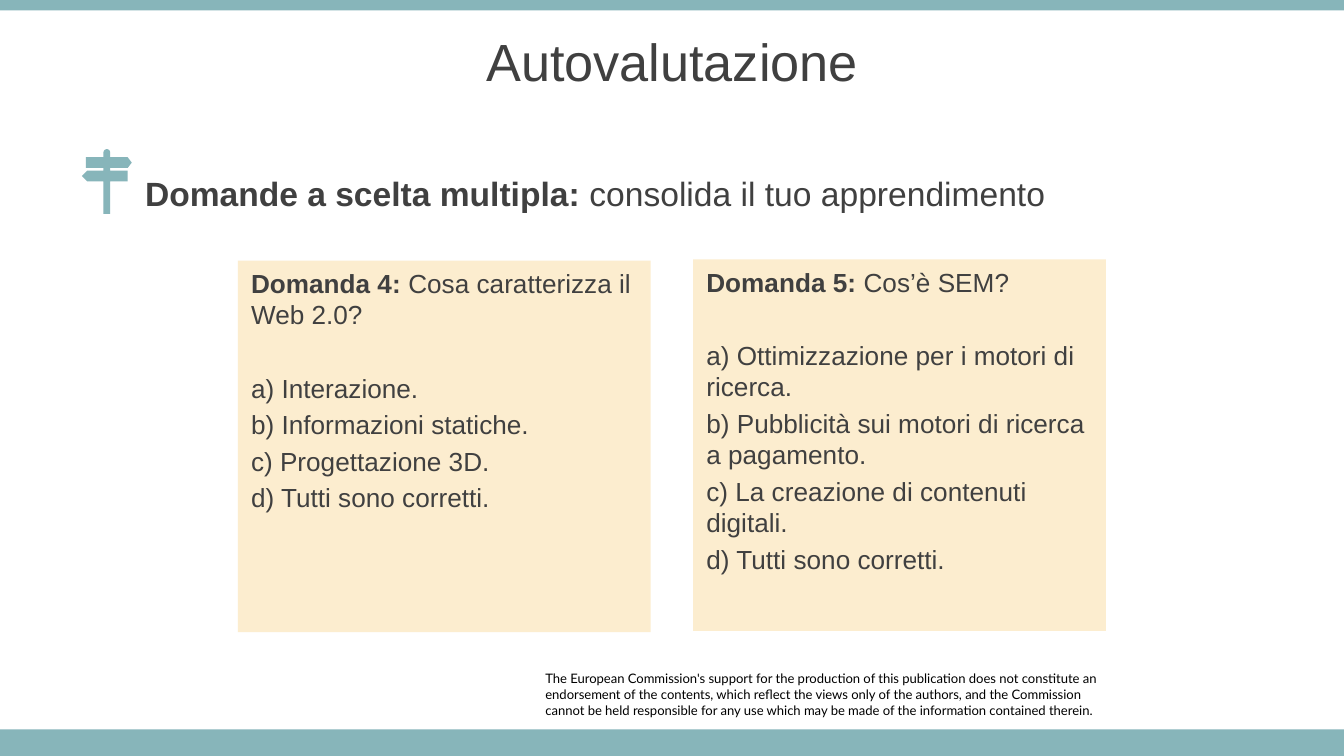
import math

import pptx
import pptx.dml.color
import pptx.enum.shapes
import pptx.enum.text
import pptx.util

Pt = pptx.util.Pt
COLORS = {"teal": "87B5BA", "cream": "FCEDCF", "text": "404040", "black": "000000"}
ANCHOR = pptx.enum.text.MSO_ANCHOR
ALIGN = pptx.enum.text.PP_ALIGN

QUESTIONS = [
    (127.4, 139.7, "Domanda 4: ", "Cosa caratterizza il Web 2.0?", [
        "a) Interazione.",
        "b) Informazioni statiche.",
        "c) Progettazione 3D.",
        "d) Tutti sono corretti.",
    ]),
    (371.3, 139, "Domanda 5: ", "Cos’è SEM?", [
        "a) Ottimizzazione per i motori di ricerca.",
        "b) Pubblicità sui motori di ricerca a pagamento.",
        "c) La creazione di contenuti digitali.",
        "d) Tutti sono corretti.",
    ]),
]
DISCLAIMER = [
    "The European Commission's support for the production of this publication does not "
    "constitute an endorsement of the contents, which reflect the views only of the "
    "authors, and the Commission",
    "cannot be held responsible for any use which may be made of the information "
    "contained therein.",
]


def color(name):
    return pptx.dml.color.RGBColor.from_string(COLORS[name])


def paint(shape, fill):
    shape.fill.solid()
    shape.fill.fore_color.rgb = color(fill)
    shape.line.fill.background()
    shape.shadow.inherit = False


def add_rectangle(page, left, top, width, height, fill):
    box = page.shapes.add_shape(
        pptx.enum.shapes.MSO_SHAPE.RECTANGLE, Pt(left), Pt(top), Pt(width), Pt(height))
    paint(box, fill)
    return box


def add_text_box(page, left, top, width, height, anchor=ANCHOR.TOP, inset=None):
    box = page.shapes.add_textbox(Pt(left), Pt(top), Pt(width), Pt(height))
    frame = box.text_frame
    frame.word_wrap = True
    frame.vertical_anchor = anchor
    if inset is not None:
        frame.margin_left = frame.margin_right = Pt(inset)
        frame.margin_top = frame.margin_bottom = Pt(inset)
    return frame


def style(para, size, font="Arial", ink="text", align=ALIGN.LEFT):
    para.alignment = align
    para.font.size = Pt(size)
    para.font.name = font
    para.font.color.rgb = color(ink)


def write_lead(para, lead, rest, size):
    style(para, size)
    span = para.add_run()
    span.text = lead
    span.font.bold = True
    para.add_run().text = rest


def set_title(page, text):
    title = page.shapes.title
    title.left, title.top, title.width, title.height = Pt(0), Pt(10), Pt(720), Pt(45.4)
    frame = title.text_frame
    frame.text = text
    frame.vertical_anchor = ANCHOR.MIDDLE
    style(frame.paragraphs[0], 28, align=ALIGN.CENTER)


def add_signpost(page):
    center, radius, cap = 57.24, 1.8, 81.7
    left, right = center - radius, center + radius
    arc = [(center + radius * math.cos(math.radians(angle)),
            cap - radius * math.sin(math.radians(angle)))
           for angle in range(180, -1, -15)]
    right_side = [(right, 84.2), (68.4, 84.2), (70.6, 87.1), (68.4, 90), (right, 90),
                  (right, 91.4), (68.4, 91.4), (68.4, 97.2), (right, 97.2), (right, 114.5)]
    left_side = [(left, 114.5), (left, 97.2), (46.8, 97.2), (43.9, 94.3), (46.8, 91.4),
                 (left, 91.4), (left, 90), (46.1, 90), (46.1, 84.2), (left, 84.2)]
    points = [(Pt(x), Pt(y)) for x, y in arc + right_side + left_side]
    builder = page.shapes.build_freeform(*points[0])
    builder.add_line_segments(points[1:], close=True)
    paint(builder.convert_to_shape(), "teal")


def add_question(page, left, top, lead, question, answers):
    box = add_rectangle(page, left, top, 221.2, 199, "cream")
    frame = box.text_frame
    frame.word_wrap = True
    frame.vertical_anchor = ANCHOR.TOP
    write_lead(frame.paragraphs[0], lead, question, 14)
    for index, answer in enumerate(answers):
        para = frame.add_paragraph()
        para.text = answer
        style(para, 14)
        para.space_before = Pt(2.8 if index else 22.4)


def add_disclaimer(page):
    frame = add_text_box(page, 292.2, 359.3, 300.2, 25.2, inset=0)
    frame.text = "\n".join(DISCLAIMER)
    for para in frame.paragraphs:
        style(para, 7, "Lato", "black")


def main():
    deck = pptx.Presentation()
    deck.slide_width, deck.slide_height = Pt(720), Pt(405)
    page = deck.slides.add_slide(deck.slide_layouts[5])
    add_disclaimer(page)
    add_rectangle(page, 0, 390.8, 720, 14.2, "teal")
    add_rectangle(page, 0, 0, 720, 5.6, "teal")
    set_title(page, "Autovalutazione")
    heading = add_text_box(page, 70.6, 92.2, 538.6, 22.3, ANCHOR.MIDDLE)
    write_lead(heading.paragraphs[0], "Domande a scelta multipla: ",
               "consolida il tuo apprendimento", 18)
    add_signpost(page)
    for question in QUESTIONS:
        add_question(page, *question)
    deck.save("out.pptx")


if __name__ == "__main__":
    main()
